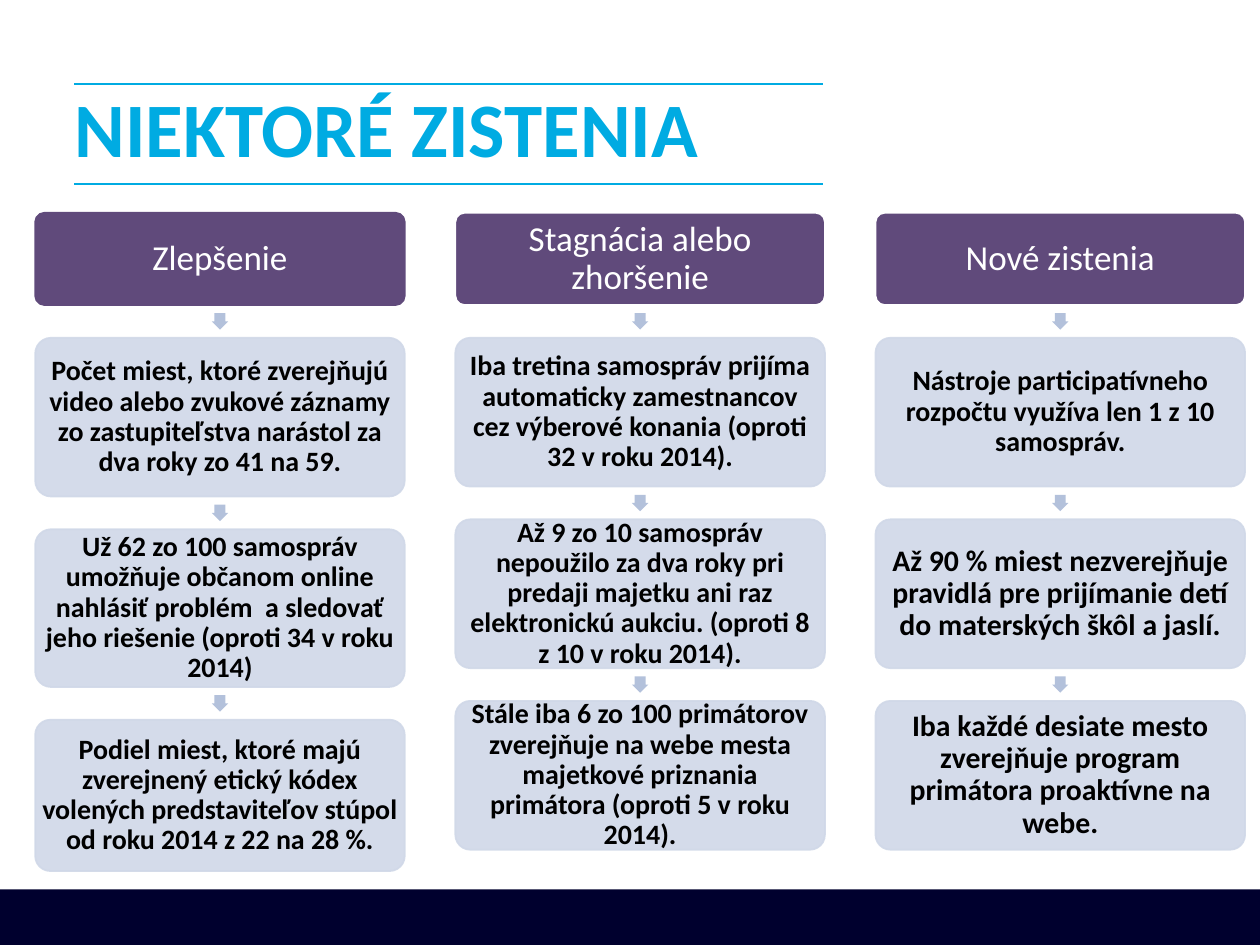
from lxml.etree import SubElement
from pptx import Presentation
from pptx.dml.color import RGBColor
from pptx.enum.shapes import MSO_CONNECTOR, MSO_SHAPE
from pptx.enum.text import MSO_ANCHOR, MSO_AUTO_SIZE, PP_ALIGN
from pptx.oxml.ns import qn
from pptx.util import Cm, Pt

COLORS = {
    "footer": "00002E",
    "accent": "00ABE2",
    "heading": "604A7B",
    "arrow": "B3C1DB",
    "finding": "D0D8E8",
    "white": "FFFFFF",
    "black": "000000",
}
FONT = "Calibri"
LEFT, PITCH, WIDTH = 0.71, 8.47, 7.45
TOP, HEADING_HEIGHT, GAP, ARROW = 4.29, 1.86, 0.66, 0.33

COLUMNS = [
    ("Zlepšenie", "heading", [
        ("Počet miest, ktoré zverejňujú video alebo zvukové záznamy zo "
         "zastupiteľstva narástol za dva roky zo 41 na 59.", 3.2, 16),
        ("Už 62 zo 100 samospráv umožňuje občanom online nahlásiť problém  a "
         "sledovať jeho riešenie (oproti 34 v roku 2014)", 3.18, 16),
        ("Podiel miest, ktoré majú zverejnený etický kódex volených "
         "predstaviteľov stúpol od roku 2014 z 22 na 28 %.", 3.05, 16),
    ]),
    ("Stagnácia alebo zhoršenie", "white", [
        ("Iba tretina samospráv prijíma automaticky zamestnancov cez výberové "
         "konania (oproti 32 v roku 2014).", 3, 16),
        ("Až 9 zo 10 samospráv nepoužilo za dva roky pri predaji majetku ani "
         "raz elektronickú aukciu. (oproti 8 z 10 v roku 2014).", 3, 16),
        ("Stále iba 6 zo 100 primátorov zverejňuje na webe mesta majetkové "
         "priznania primátora (oproti 5 v roku 2014).", 3, 16),
    ]),
    ("Nové zistenia", "white", [
        ("Nástroje participatívneho rozpočtu využíva len 1 z 10 samospráv.", 3, 16),
        ("Až 90 % miest nezverejňuje pravidlá pre prijímanie detí do "
         "materských škôl a jaslí.", 3, 17),
        ("Iba každé desiate mesto zverejňuje program primátora proaktívne na "
         "webe.", 3, 17),
    ]),
]


def color(name):
    return RGBColor.from_string(COLORS[name])


def write(frame, text, size, ink, bold, align, inset):
    frame.word_wrap = True
    frame.auto_size = MSO_AUTO_SIZE.NONE
    frame.vertical_anchor = MSO_ANCHOR.MIDDLE
    frame.margin_left = frame.margin_right = Cm(inset)
    frame.margin_top = frame.margin_bottom = Cm(inset)
    paragraph = frame.paragraphs[0]
    paragraph.alignment = align
    paragraph.line_spacing = 0.9
    run = paragraph.add_run()
    run.text = text
    run.font.name = FONT
    run.font.size = Pt(size)
    run.font.bold = bold
    run.font.color.rgb = color(ink)


def add_block(slide, preset, left, top, width, height, fill, outline=None):
    block = slide.shapes.add_shape(preset, Cm(left), Cm(top), Cm(width), Cm(height))
    block.shadow.inherit = False
    block.fill.solid()
    block.fill.fore_color.rgb = color(fill)
    if outline:
        block.line.color.rgb = color(outline)
        block.line.width = Pt(1)
    else:
        block.line.fill.background()
    return block


def add_box(slide, left, top, height, fill, outline):
    box = add_block(slide, MSO_SHAPE.ROUNDED_RECTANGLE, left, top, WIDTH, height,
                    fill, outline)
    box.adjustments[0] = 0.1
    return box


def add_heading(slide, left, text, outline):
    heading = add_box(slide, left, TOP, HEADING_HEIGHT, "heading", outline)
    write(heading.text_frame, text, 20, "white", False, PP_ALIGN.CENTER, 0.07)


def add_finding(slide, left, top, height, text, size):
    finding = add_box(slide, left, top, height, "finding", "finding")
    for tint in finding._element.spPr.iter(qn("a:srgbClr")):
        SubElement(tint, qn("a:alpha"), val="90000")
    write(finding.text_frame, text, size, "black", True, PP_ALIGN.CENTER, 0.05)


def add_arrow(slide, left, gap_top):
    arrow = add_block(slide, MSO_SHAPE.DOWN_ARROW, left + (WIDTH - ARROW) / 2,
                      gap_top + (GAP - ARROW) / 2, ARROW, ARROW, "arrow")
    arrow.adjustments[0] = 0.67
    arrow.adjustments[1] = 0.5


def add_column(slide, left, heading, outline, findings):
    add_heading(slide, left, heading, outline)
    bottom = TOP + HEADING_HEIGHT
    for text, height, size in findings:
        add_arrow(slide, left, bottom)
        add_finding(slide, left, bottom + GAP, height, text, size)
        bottom += GAP + height


def add_rule(slide, y):
    rule = slide.shapes.add_connector(MSO_CONNECTOR.STRAIGHT, Cm(1.5), Cm(y),
                                      Cm(16.6), Cm(y))
    rule.line.color.rgb = color("accent")
    rule.line.width = Pt(1)
    SubElement(rule._element.spPr, qn("a:effectLst"))


def add_title(slide, text):
    title = slide.shapes.title
    title.left, title.top = Cm(1.5), Cm(1.58)
    title.width, title.height = Cm(17.6), Cm(2.2)
    write(title.text_frame, text, 44, "accent", True, PP_ALIGN.LEFT, 0)


def main():
    deck = Presentation()
    deck.slide_width, deck.slide_height = Cm(25.4), Cm(19.05)
    slide = deck.slides.add_slide(deck.slide_layouts[5])
    add_block(slide, MSO_SHAPE.RECTANGLE, 0, 17.93, 25.4, 1.12, "footer")
    for y in (1.69, 3.71):
        add_rule(slide, y)
    add_title(slide, "NIEKTORÉ ZISTENIA")
    for index, (heading, outline, findings) in enumerate(COLUMNS):
        add_column(slide, LEFT + index * PITCH, heading, outline, findings)
    deck.save("out.pptx")


if __name__ == "__main__":
    main()
